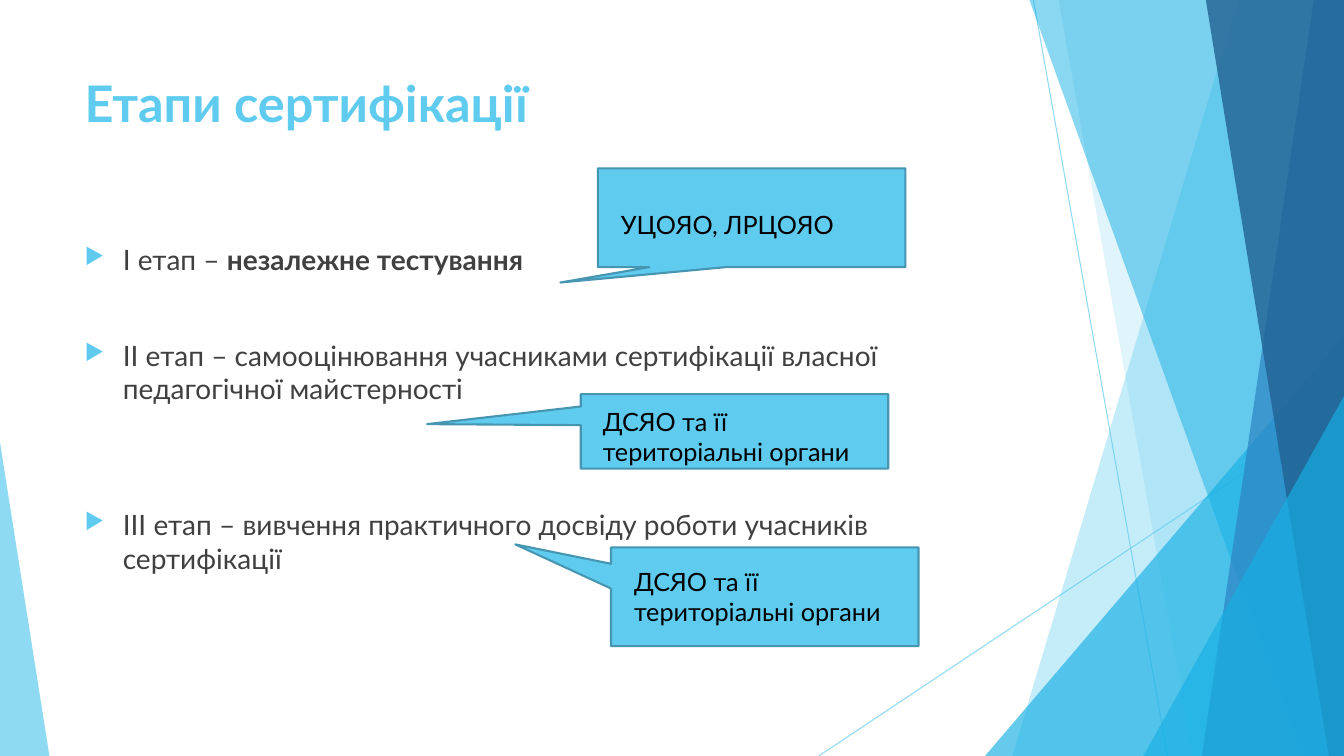
from dataclasses import dataclass
from typing import NamedTuple

from lxml import etree
from pptx import Presentation
from pptx.dml.color import RGBColor
from pptx.enum.shapes import MSO_CONNECTOR, MSO_SHAPE
from pptx.enum.text import MSO_ANCHOR
from pptx.oxml.ns import qn
from pptx.util import Inches, Pt

STRAIGHT = MSO_CONNECTOR.STRAIGHT
TRIANGLE = MSO_SHAPE.ISOSCELES_TRIANGLE
CALLOUT = MSO_SHAPE.RECTANGULAR_CALLOUT
TOP = MSO_ANCHOR.TOP


@dataclass(frozen=True)
class Theme:
    font: str = "Lato"
    accent: str = "5FCBEF"
    accent_edge: str = "4696B1"
    cyan: str = "17B0E4"
    blue: str = "2E83C3"
    navy: str = "226292"
    body: str = "404040"
    label: str = "000000"
    title_size: int = 36
    body_size: int = 20
    label_size: int = 18


class Box(NamedTuple):
    left: float
    top: float
    width: float
    height: float


THEME = Theme()
SLIDE = Box(0, 0, 13.33, 7.5)

STAGES = [
    (0, [("І етап – ", False), ("незалежне тестування", True)]),
    (44, [("ІІ етап – самооцінювання учасниками сертифікації власної педагогічної майстерності", False)]),
    (73, [("ІІІ етап – вивчення практичного досвіду роботи учасників сертифікації", False)]),
]

AGENCY = "ДСЯО та її територіальні органи"
CALLOUTS = [
    (Box(5.93, 1.67, 3.05, 0.98), (-0.622, 0.656), Box(0.13, 0.36, 2.79, 0.41), "УЦОЯО, ЛРЦОЯО"),
    (Box(5.76, 3.91, 3.05, 0.74), (-1, -0.097), Box(0.12, 0.07, 2.82, 0.71), AGENCY),
    (Box(6.06, 5.43, 3.05, 0.98), (-0.811, -0.53), Box(0.13, 0.14, 2.79, 0.71), AGENCY),
]


def set_alpha(fill_parent, percent):
    color = fill_parent.find(f"{qn('a:solidFill')}/{qn('a:srgbClr')}")
    etree.SubElement(color, qn("a:alpha")).set("val", str(percent * 1000))


def paint(shape, color, percent):
    shape.shadow.inherit = False
    shape.fill.solid()
    shape.fill.fore_color.rgb = RGBColor.from_string(color)
    shape.line.fill.background()
    set_alpha(shape._element.spPr, percent)


def add_thin_line(slide, start, end):
    line = slide.shapes.add_connector(STRAIGHT, *(Inches(value) for value in start + end))
    line.line.width = Pt(0.75)
    line.line.color.rgb = RGBColor.from_string(THEME.accent)
    properties = line._element.spPr
    set_alpha(properties.find(qn("a:ln")), 70)
    etree.SubElement(properties, qn("a:effectLst"))


def add_band(slide, box, top_x, bottom_x, color, percent):
    right, bottom = box.left + box.width, box.top + box.height
    builder = slide.shapes.build_freeform(Inches(box.left + top_x), Inches(box.top), scale=1.0)
    corners = [(right, box.top), (right, bottom), (box.left + bottom_x, bottom)]
    builder.add_line_segments([(Inches(x), Inches(y)) for x, y in corners], close=True)
    paint(builder.convert_to_shape(), color, percent)


def add_corner_triangle(slide, box, left, width, height, apex, color, percent):
    top = box.top + box.height - height
    shape = slide.shapes.add_shape(
        TRIANGLE, Inches(box.left + left), Inches(top), Inches(width), Inches(height)
    )
    shape.adjustments[0] = apex
    paint(shape, color, percent)


def add_facets(slide, box):
    right, bottom = box.left + box.width, box.top + box.height
    add_thin_line(slide, (box.left + 10.25, box.top), (box.left + 11.58, bottom))
    add_thin_line(slide, (right, box.top + 4.03), (box.left + 8.12, bottom))
    add_band(slide, box, 12.28, 10.04, THEME.accent, 36)
    add_band(slide, box, 10.5, 11.83, THEME.accent, 20)
    add_corner_triangle(slide, box, 9.77, 3.56, 4.17, 1, THEME.cyan, 66)
    add_band(slide, box, 10.21, 12.91, THEME.cyan, 50)
    add_band(slide, box, 13.03, 11.92, THEME.blue, 70)
    add_band(slide, box, 11.96, 13.18, THEME.navy, 80)
    add_corner_triangle(slide, box, 11.34, 1.99, 3.57, 1, THEME.cyan, 66)
    add_corner_triangle(slide, box, 0, 0.49, 3.11, 0, THEME.accent, 70)


def add_text_frame(slide, box):
    frame = slide.shapes.add_textbox(*(Inches(value) for value in box)).text_frame
    frame.word_wrap = True
    frame.vertical_anchor = TOP
    return frame


def add_run(paragraph, text, size, color, bold=False):
    run = paragraph.add_run()
    run.text = text
    run.font.name = THEME.font
    run.font.size = Pt(size)
    run.font.bold = bold
    run.font.color.rgb = RGBColor.from_string(color)


def add_bullet(paragraph):
    properties = paragraph._p.get_or_add_pPr()
    properties.set("marL", str(Inches(0.38)))
    properties.set("indent", str(-Inches(0.38)))
    color = etree.SubElement(properties, qn("a:buClr"))
    etree.SubElement(color, qn("a:srgbClr")).set("val", THEME.accent)
    etree.SubElement(properties, qn("a:buSzPct")).set("val", "80000")
    etree.SubElement(properties, qn("a:buChar")).set("char", "▶")


def add_title(slide, box):
    paragraph = add_text_frame(slide, box).paragraphs[0]
    add_run(paragraph, "Етапи сертифікації", THEME.title_size, THEME.accent, True)


def add_stages(slide, box):
    frame = add_text_frame(slide, box)
    for index, (space_before, runs) in enumerate(STAGES):
        paragraph = frame.add_paragraph() if index else frame.paragraphs[0]
        paragraph.space_before = Pt(space_before)
        add_bullet(paragraph)
        for text, bold in runs:
            add_run(paragraph, text, THEME.body_size, THEME.body, bold)


def add_callout(slide, box, tip, label, text):
    shape = slide.shapes.add_shape(CALLOUT, *(Inches(value) for value in box))
    shape.adjustments[0], shape.adjustments[1] = tip
    paint(shape, THEME.accent, 100)
    shape.line.color.rgb = RGBColor.from_string(THEME.accent_edge)
    shape.line.width = Pt(1.5)
    label_box = Box(box.left + label.left, box.top + label.top, label.width, label.height)
    paragraph = add_text_frame(slide, label_box).paragraphs[0]
    add_run(paragraph, text, THEME.label_size, THEME.label)


def main():
    presentation = Presentation()
    presentation.slide_width = Inches(SLIDE.width)
    presentation.slide_height = Inches(SLIDE.height)
    slide = presentation.slides.add_slide(presentation.slide_layouts[6])
    add_facets(slide, SLIDE)
    add_title(slide, Box(0.74, 0.67, 9.4, 1.44))
    add_stages(slide, Box(0.74, 2.36, 9.4, 4.24))
    for callout in CALLOUTS:
        add_callout(slide, *callout)
    presentation.save("out.pptx")


if __name__ == "__main__":
    main()
